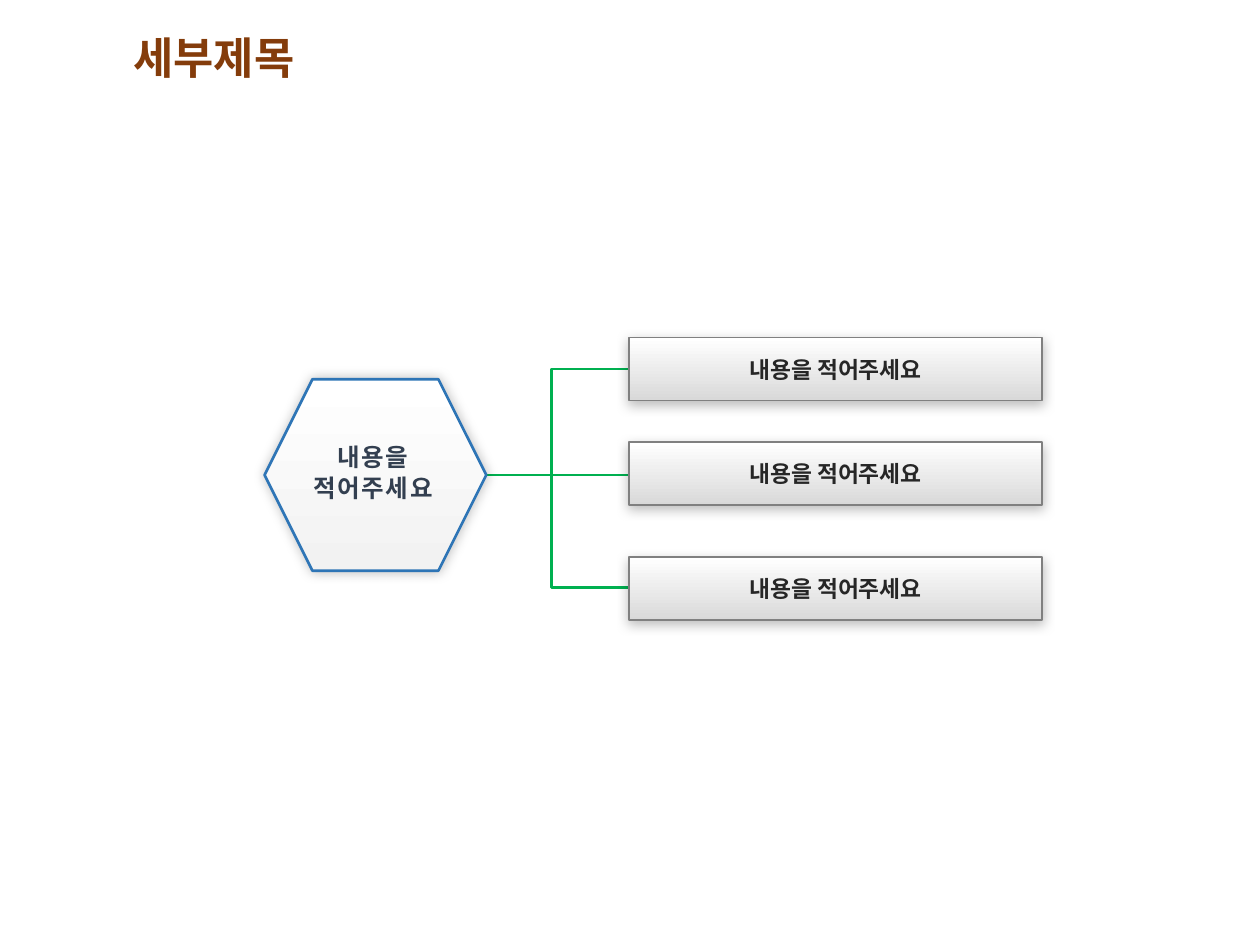
from lxml.etree import SubElement
from pptx import Presentation
from pptx.dml.color import RGBColor
from pptx.enum.shapes import MSO_CONNECTOR, MSO_SHAPE
from pptx.enum.text import MSO_ANCHOR, PP_ALIGN
from pptx.oxml.ns import qn
from pptx.util import Inches, Pt

COLORS = {
    "title": "843C0B", "branch": "00B050", "white": "FFFFFF", "shadow": "000000",
    "hub_end": "F2F2F2", "hub_line": "2E75B6", "hub_text": "333F50",
    "box_end": "D9D9D9", "box_line": "808080", "box_text": "262626",
}


def color(name):
    return RGBColor.from_string(COLORS[name])


class SlideBuilder:
    title_font = "Calibri"
    body_font = "Noto Sans CJK KR"

    def __init__(self, slide):
        self.slide = slide

    def title(self, text, left, top, width, height):
        shape = self.slide.shapes.title
        shape.left, shape.top = Inches(left), Inches(top)
        shape.width, shape.height = Inches(width), Inches(height)
        shape.text_frame.vertical_anchor = MSO_ANCHOR.MIDDLE
        shape.text_frame.text = text
        paragraph = shape.text_frame.paragraphs[0]
        paragraph.alignment = PP_ALIGN.LEFT
        paragraph.line_spacing = 0.9
        self.style_font(paragraph.font, self.title_font, 25, "title")

    def style_font(self, font, name, size, color_name):
        font.name, font.size, font.bold = name, Pt(size), True
        font.color.rgb = color(color_name)

    def text(self, frame, lines, size, color_name, line_spacing=None, tracking=0):
        """Write centred bold lines, with line spacing and tracking in points."""
        frame.word_wrap = True
        frame.text = "\n".join(lines)
        for paragraph in frame.paragraphs:
            paragraph.alignment = PP_ALIGN.CENTER
            if line_spacing:
                paragraph.line_spacing = Pt(line_spacing)
            self.style_font(paragraph.font, self.body_font, size, color_name)
            for run in paragraph.runs:
                properties = run._r.get_or_add_rPr()
                if tracking:
                    properties.set("spc", str(tracking * 100))
                SubElement(properties, qn("a:ea"), typeface=self.body_font)

    def text_box(self, lines, left, top, width, height, **style):
        shape = self.slide.shapes.add_textbox(
            Inches(left), Inches(top), Inches(width), Inches(height))
        self.text(shape.text_frame, lines, **style)

    def panel(self, kind, left, top, width, height, end, line, line_width, drop=0):
        """Add a shape with a vertical gradient and a soft shadow dropped by points."""
        shape = self.slide.shapes.add_shape(
            kind, Inches(left), Inches(top), Inches(width), Inches(height))
        shape.fill.gradient()
        shape.fill.gradient_angle = 270
        for stop, name, position in zip(shape.fill.gradient_stops, ("white", end), (0, 1)):
            stop.color.rgb = color(name)
            stop.position = position
        shape.line.color.rgb = color(line)
        shape.line.width = Pt(line_width)
        shape.shadow.inherit = False
        effects = shape._element.spPr.find(qn("a:effectLst"))
        shadow = SubElement(
            effects, qn("a:outerShdw"), blurRad=str(Pt(7)), dist=str(Pt(drop)),
            dir="5400000" if drop else "0", algn="ctr", rotWithShape="0")
        shade = SubElement(shadow, qn("a:srgbClr"), val=COLORS["shadow"])
        SubElement(shade, qn("a:alpha"), val="25000")
        return shape

    def branch(self, kind, start, end):
        connector = self.slide.shapes.add_connector(
            kind, *(Inches(value) for value in (*start, *end)))
        connector.line.color.rgb = color("branch")
        connector.line.width = Pt(1.5)
        SubElement(connector._element.spPr, qn("a:effectLst"))


def main():
    presentation = Presentation()
    presentation.slide_width, presentation.slide_height = Inches(10), Inches(7.5)
    title_only = presentation.slide_layouts[5]
    builder = SlideBuilder(presentation.slides.add_slide(title_only))

    builder.title("세부제목", 0.96, 0.19, 8.62, 0.57)

    hub_middle = 3.77
    for end_y in (4.66, 2.93):
        builder.branch(MSO_CONNECTOR.ELBOW, (3.48, hub_middle), (5.27, end_y))
    builder.branch(MSO_CONNECTOR.STRAIGHT, (3.66, hub_middle), (5.3, hub_middle))

    builder.panel(MSO_SHAPE.HEXAGON, 2.1, 3.01, 1.76, 1.52, "hub_end", "hub_line", 1.5)
    builder.text_box(["내용을", "적어주세요"], 2.1, 3.44, 1.72, 0.61,
                     size=14, color_name="hub_text", line_spacing=18, tracking=1)

    for top in (2.68, 3.51, 4.42):
        box = builder.panel(MSO_SHAPE.RECTANGLE, 4.99, top, 3.28, 0.5,
                            "box_end", "box_line", 1, drop=2)
        box.text_frame.vertical_anchor = MSO_ANCHOR.MIDDLE
        builder.text(box.text_frame, ["내용을 적어주세요"], 13, "box_text")

    presentation.save("out.pptx")


if __name__ == "__main__":
    main()
